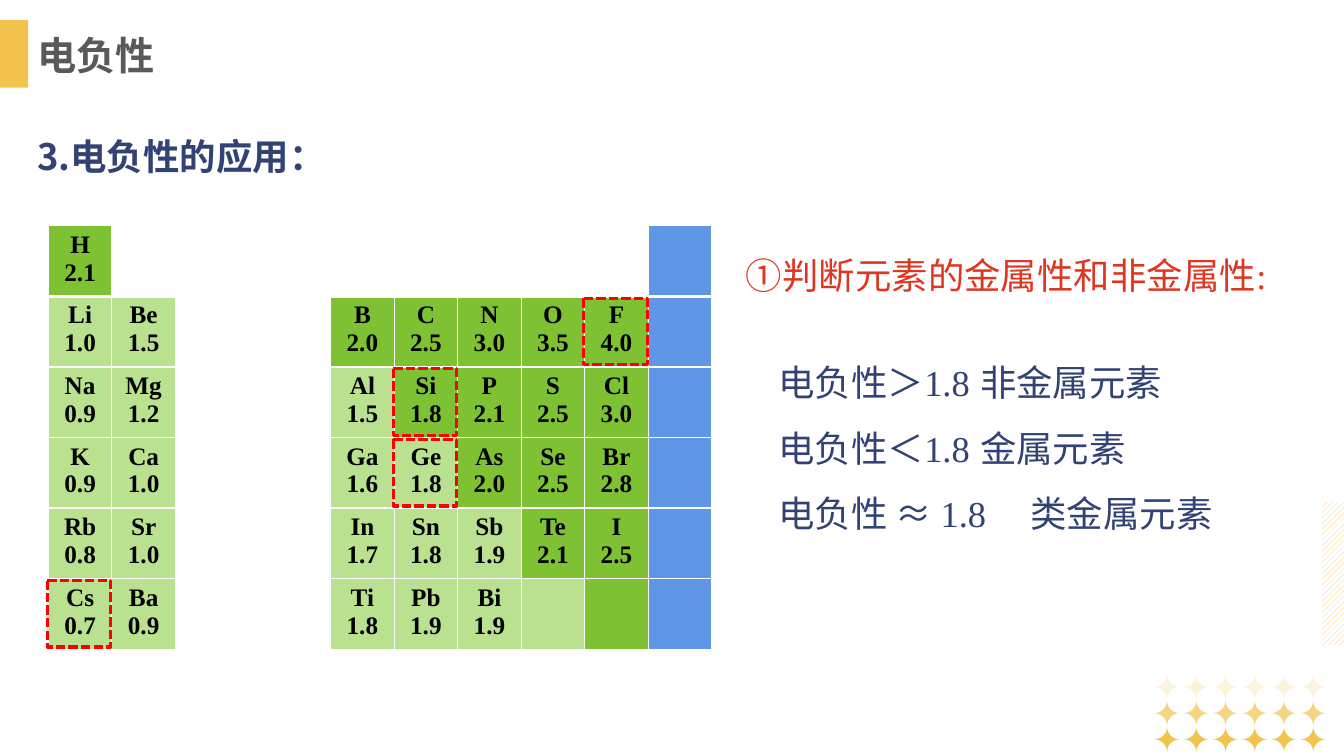
import pptx
import pptx.util
import pptx.dml.color
import pptx.enum.dml
import pptx.enum.shapes
import pptx.enum.text
import pptx.oxml
import pptx.oxml.ns
import lxml.etree

# Content
TITLE = "电负性"
HEADING = "3.电负性的应用："
PURPOSE = "①判断元素的金属性和非金属性:"
CRITERIA = [  # text, tab stop in inches
    ("电负性＞1.8\t非金属元素", 2.53),
    ("电负性＜1.8\t金属元素", 2.53),
    ("电负性 ≈ 1.8\t类金属元素", 2.6),
]
ELEMENTS = [
    {0: "H 2.1"},
    {0: "Li 1.0", 1: "Be 1.5", 3: "B 2.0", 4: "C 2.5", 5: "N 3.0", 6: "O 3.5", 7: "F 4.0"},
    {0: "Na 0.9", 1: "Mg 1.2", 3: "Al 1.5", 4: "Si 1.8", 5: "P 2.1", 6: "S 2.5", 7: "Cl 3.0"},
    {0: "K 0.9", 1: "Ca 1.0", 3: "Ga 1.6", 4: "Ge 1.8", 5: "As 2.0", 6: "Se 2.5", 7: "Br 2.8"},
    {0: "Rb 0.8", 1: "Sr 1.0", 3: "In 1.7", 4: "Sn 1.8", 5: "Sb 1.9", 6: "Te 2.1", 7: "I 2.5"},
    {0: "Cs 0.7", 1: "Ba 0.9", 3: "Ti 1.8", 4: "Pb 1.9", 5: "Bi 1.9"},
]
FRAMED_CELLS = [(1, 7), (5, 0), (2, 4), (3, 4)]

# Grid and style
WIDTH, HEIGHT = 13.33, 7.5
TABLE_LEFT, TABLE_TOP, ROW_HEIGHT = 0.48, 2.24, 0.7
COLUMN_WIDTHS = [0.63, 0.63, 1.54] + [0.63] * 6
GAP_COLUMN, NOBLE_COLUMN = 2, 8
STAR_LEFT, STAR_TOP, STAR_SIZE = 11.45, 6.69, 0.25
STAR_STEP_X, STAR_STEP_Y = 0.29, 0.26
STAR_OPACITIES = [20, 70, 100]
GOLD, NAVY, RED, GRAY = "F2C34D", "324274", "DF3621", "595959"
NONMETAL, METAL, NOBLE, FRAME = "7EC234", "BAE18F", "6096E6", "FF0000"
SERIF, SANS = "Times New Roman", "Noto Sans CJK SC"
SHAPES = pptx.enum.shapes.MSO_SHAPE
ALIGN = pptx.enum.text.PP_ALIGN
inches = pptx.util.Inches


def color(value):
    return pptx.dml.color.RGBColor.from_string(value)


def add_xml(parent, tag, **attributes):
    child = lxml.etree.SubElement(parent, pptx.oxml.ns.qn(tag))
    for name, value in attributes.items():
        child.set(name, str(value))
    return child


def write(paragraph, text, size=26, font=SERIF, fill=NAVY, bold=False,
          align=ALIGN.LEFT, spacing=1.0):
    paragraph.alignment = align
    paragraph.line_spacing = spacing
    paragraph.space_before = pptx.util.Pt(0)
    run = paragraph.add_run()
    run.text = text
    run.font.size = pptx.util.Pt(size)
    run.font.name = font
    run.font.bold = bold
    run.font.color.rgb = color(fill)
    add_xml(run.font._element, "a:ea", typeface=SANS)


def place(shape, left, top, width, height, wrap=True):
    shape.left, shape.top = inches(left), inches(top)
    shape.width, shape.height = inches(width), inches(height)
    frame = shape.text_frame
    frame.word_wrap = wrap
    frame.auto_size = pptx.enum.text.MSO_AUTO_SIZE.NONE
    frame.vertical_anchor = pptx.enum.text.MSO_ANCHOR.TOP
    return frame


def add_shape(slide, kind, left, top, width, height):
    shape = slide.shapes.add_shape(
        kind, inches(left), inches(top), inches(width), inches(height))
    shape.shadow.inherit = False
    shape.line.fill.background()
    return shape


def add_text(slide, box, text, wrap=True, **style):
    shape = slide.shapes.add_textbox(0, 0, 0, 0)
    write(place(shape, *box, wrap=wrap).paragraphs[0], text, **style)


def add_decoration(slide):
    bar = add_shape(slide, SHAPES.RECTANGLE, 0, 0.2, 0.28, 0.67)
    bar.fill.solid()
    bar.fill.fore_color.rgb = color(GOLD)

    hatch = add_shape(slide, SHAPES.RECTANGLE, WIDTH - 0.22, 4.98, 0.22, 1.42)
    hatch.fill.patterned()
    hatch.fill.pattern = pptx.enum.dml.MSO_PATTERN.WIDE_UPWARD_DIAGONAL
    hatch.fill.fore_color.rgb = color(GOLD)
    hatch.fill.back_color.rgb = color("FFFFFF")

    for row, opacity in enumerate(STAR_OPACITIES):
        for column in range(6):
            star = add_shape(slide, SHAPES.PLAQUE, STAR_LEFT + column * STAR_STEP_X,
                             STAR_TOP + row * STAR_STEP_Y, STAR_SIZE, STAR_SIZE)
            star.adjustments[0] = 0.5
            star.fill.solid()
            star.fill.fore_color.rgb = color(GOLD)
            if opacity < 100:
                solid = star._element.spPr.find(pptx.oxml.ns.qn("a:solidFill"))
                add_xml(solid[0], "a:alpha", val=opacity * 1000)


def add_borders(cell, row):
    properties = cell._tc.get_or_add_tcPr()
    thick_side = {0: "a:lnB", 1: "a:lnT"}.get(row)
    for side in ("a:lnL", "a:lnR", "a:lnT", "a:lnB"):
        points = 3 if side == thick_side else 1
        line = add_xml(properties, side, w=points * 12700)
        add_xml(add_xml(line, "a:solidFill"), "a:srgbClr", val="FFFFFF")


def cell_fill(row, column):
    if column == NOBLE_COLUMN:
        return NOBLE
    if row == 0:
        return NONMETAL if column == 0 else None
    if column == GAP_COLUMN:
        return None
    # The nonmetals begin one column further right in each row
    return NONMETAL if column >= row + 2 else METAL


def add_element_table(slide):
    rows, columns = len(ELEMENTS), len(COLUMN_WIDTHS)
    table = slide.shapes.add_table(
        rows, columns, inches(TABLE_LEFT), inches(TABLE_TOP),
        inches(sum(COLUMN_WIDTHS)), inches(rows * ROW_HEIGHT)).table
    table.first_row = table.horz_banding = False
    for column, width in enumerate(COLUMN_WIDTHS):
        table.columns[column].width = inches(width)
    for row, elements in enumerate(ELEMENTS):
        table.rows[row].height = inches(ROW_HEIGHT)
        for column in range(columns):
            cell = table.cell(row, column)
            add_borders(cell, row)
            fill = cell_fill(row, column)
            if fill:
                cell.fill.solid()
                cell.fill.fore_color.rgb = color(fill)
            else:
                cell.fill.background()
            for index, text in enumerate(elements.get(column, "").split()):
                frame = cell.text_frame
                paragraph = frame.add_paragraph() if index else frame.paragraphs[0]
                write(paragraph, text, size=18, fill="000000", bold=True, align=ALIGN.CENTER)
    table.cell(0, 1).merge(table.cell(0, NOBLE_COLUMN - 1))
    table.cell(3, GAP_COLUMN).merge(table.cell(5, GAP_COLUMN))


def add_frames(slide):
    for row, column in FRAMED_CELLS:
        left = TABLE_LEFT + sum(COLUMN_WIDTHS[:column]) - 0.01
        top = TABLE_TOP + row * ROW_HEIGHT + 0.02
        frame = add_shape(slide, SHAPES.ROUNDED_RECTANGLE, left, top, 0.63, 0.66)
        frame.adjustments[0] = 0
        frame.fill.background()
        frame.line.color.rgb = color(FRAME)
        frame.line.width = pptx.util.Pt(2.25)
        frame.line.dash_style = pptx.enum.dml.MSO_LINE.SQUARE_DOT


def add_criteria(body):
    frame = place(body, 7.62, 3.31, 4.92, 2.07)
    for index, (text, tab_stop) in enumerate(CRITERIA):
        paragraph = frame.add_paragraph() if index else frame.paragraphs[0]
        write(paragraph, text, spacing=1.5)
        properties = paragraph._p.get_or_add_pPr()
        properties.set("marL", "0")
        properties.set("indent", "0")
        add_xml(properties, "a:buNone")
        add_xml(add_xml(properties, "a:tabLst"), "a:tab", pos=inches(tab_stop), algn="l")


def main():
    presentation = pptx.Presentation()
    presentation.slide_width, presentation.slide_height = inches(WIDTH), inches(HEIGHT)
    slide = presentation.slides.add_slide(presentation.slide_layouts[1])
    add_decoration(slide)
    add_text(slide, (7.3, 2.46, 5.79, 0.54), PURPOSE, fill=RED)
    add_element_table(slide)
    add_frames(slide)
    add_criteria(slide.placeholders[1])
    add_text(slide, (0.27, 1.28, 3.05, 0.54), HEADING, wrap=False, font=SANS, bold=True)
    title = place(slide.shapes.title, 0.27, 0.26, 1.37, 0.57, wrap=False)
    write(title.paragraphs[0], TITLE, size=28, font="Arial", fill=GRAY, bold=True)
    presentation.save("out.pptx")


if __name__ == "__main__":
    main()
